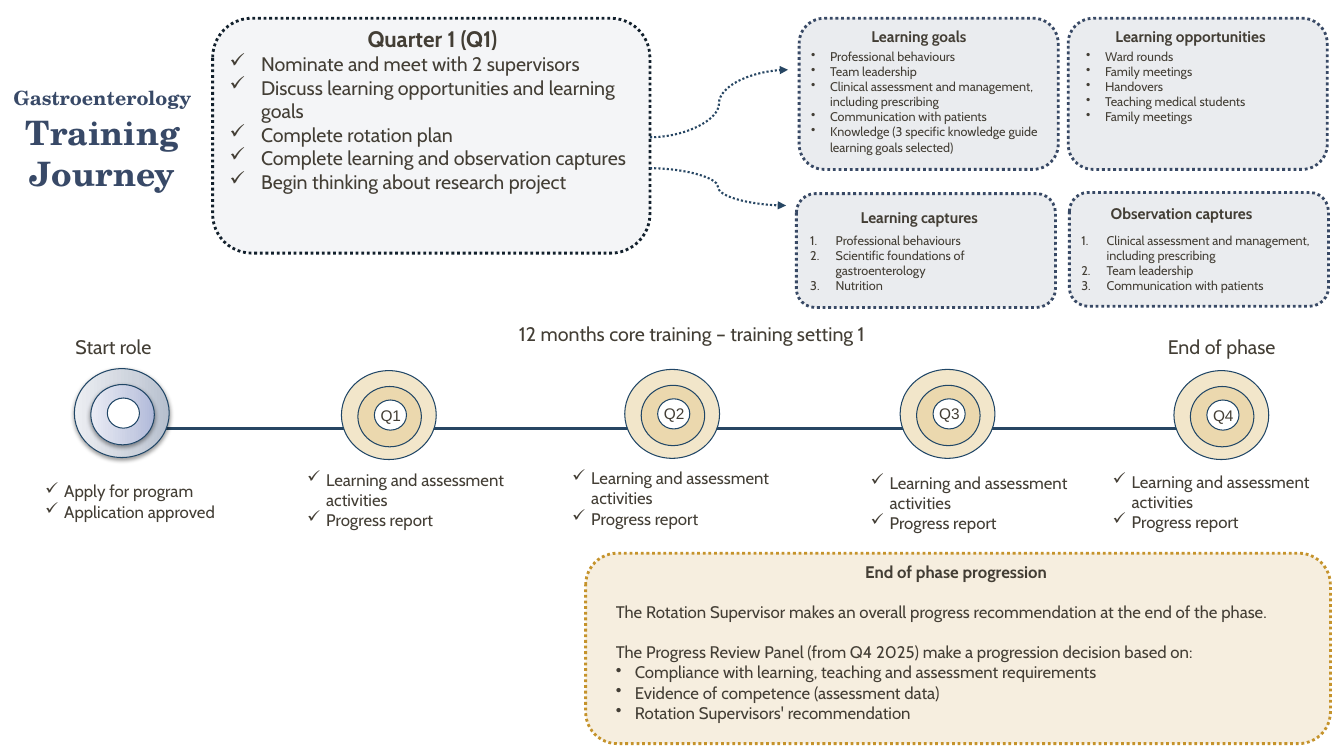
import pptx
import pptx.util
import pptx.dml.color
import pptx.enum.dml
import pptx.enum.shapes
import pptx.enum.text
import pptx.oxml.ns
from lxml import etree

Cm, Pt = pptx.util.Cm, pptx.util.Pt
qn = pptx.oxml.ns.qn
KIND = pptx.enum.shapes.MSO_SHAPE
LINK = pptx.enum.shapes.MSO_CONNECTOR
ALIGN = pptx.enum.text.PP_ALIGN
FIT = pptx.enum.text.MSO_AUTO_SIZE
DOT = pptx.enum.dml.MSO_LINE.ROUND_DOT

HUE = {
    "text": "433E35", "title": "384967", "navy": "384965", "ink": "12202C",
    "rail": "274663", "ring": "204666", "deep": "003C76", "cream": "F2E6CA",
    "gold": "D3A440", "amber": "C5932B", "white": "FFFFFF", "black": "000000",
}
STEEL = ("B6BFCE", "CCD2DC", "ECEEF2")
LILAC = ("AFB8D9", "C7CDE3", "EAECF5")


def rgb(name):
    return pptx.dml.color.RGBColor.from_string(HUE[name])


def sub(node, tag, **attrs):
    return etree.SubElement(node, qn(tag), attrs)


def style(font, hue="text", **values):
    font.color.rgb = rgb(hue)
    for key, value in values.items():
        setattr(font, key, value)


def stroke(line, hue, width, dash=None):
    line.color.rgb = rgb(hue)
    line.width = Pt(width)
    if dash:
        line.dash_style = dash


def shape(slide, kind, box, fill, line, alpha=100):
    item = slide.shapes.add_shape(kind, *map(Cm, box))
    item.shadow.inherit = False
    item.fill.solid()
    item.fill.fore_color.rgb = rgb(fill)
    if alpha < 100:
        tint = item._element.spPr.find(".//" + qn("a:srgbClr"))
        sub(tint, "a:alpha", val=str(alpha * 1000))
    stroke(item.line, *line)
    return item


def shade(item, stops):
    """Give a disc a right-to-left gradient and a soft shadow below."""
    item.fill.gradient()
    item.fill.gradient_angle = 180
    props = item._element.spPr
    ramp = props.find(".//" + qn("a:gsLst"))
    for old in list(ramp):
        ramp.remove(old)
    for spot, hue in zip((0, 35, 100), stops):
        stop = sub(ramp, "a:gs", pos=str(spot * 1000))
        sub(stop, "a:srgbClr", val=hue)
    glow = sub(props.find(qn("a:effectLst")), "a:outerShdw", blurRad=str(Pt(3.1)),
               dist=str(Pt(1.6)), dir="5400000", rotWithShape="0")
    tint = sub(glow, "a:srgbClr", val=HUE["black"])
    sub(tint, "a:alpha", val="38000")


def mark(para, sign, indent):
    """Hang a bullet sign on a paragraph; "1." numbers it."""
    props = para._p.get_or_add_pPr()
    props.set("marL", str(Cm(indent)))
    props.set("indent", str(-Cm(indent)))
    if sign == "1.":
        sub(props, "a:buAutoNum", type="arabicPeriod")
    else:
        sub(props, "a:buChar", char=sign)


def text(slide, box, lines, size, wrap=True, sign=None, indent=0.48, face="Cabin", bold=False):
    frame = slide.shapes.add_textbox(*map(Cm, box)).text_frame
    frame.word_wrap = wrap
    frame.auto_size = FIT.SHAPE_TO_FIT_TEXT
    for i, line in enumerate(lines):
        para = frame.paragraphs[0] if i == 0 else frame.add_paragraph()
        if sign:
            mark(para, sign, indent)
        run = para.add_run()
        run.text = line
        style(run.font, name=face, size=Pt(size), bold=bold)
    return frame


def wire(slide, kind, ends, width, dash=None):
    item = slide.shapes.add_connector(kind, *map(Cm, ends))
    stroke(item.line, "rail", width, dash)
    sub(item._element.spPr, "a:effectLst")
    return item


def head(slide, box):
    title = slide.shapes.title
    title.left, title.top, title.width, title.height = map(Cm, box)
    frame = title.text_frame
    values = {"margin_left": Cm(0.18), "margin_right": Cm(0.18), "margin_top": Cm(0.1),
              "margin_bottom": Cm(0.1), "word_wrap": True, "auto_size": FIT.NONE,
              "vertical_anchor": pptx.enum.text.MSO_ANCHOR.MIDDLE}
    for key, value in values.items():
        setattr(frame, key, value)
    para = frame.paragraphs[0]
    para.alignment = ALIGN.CENTER
    for words, size in (("Gastroenterology", 14), (" Training Journey", 24)):
        run = para.add_run()
        run.text = words
        style(run.font, "title", name="TeX Gyre Schola", size=Pt(size), bold=True)


def stage(slide, x, y, name, note, lines):
    """Draw three nested discs around (x, y) and the checklist below."""
    discs = ((0, 0, 2.39, 2.24, "cream", 100, STEEL),
             (0.02, 0.04, 1.6, 1.52, "gold", 20, LILAC),
             (0.04, 0, 0.81, 0.76, "white", 100, None))
    for dx, dy, w, h, fill, alpha, stops in discs:
        box = (x + dx - w / 2, y + dy - h / 2, w, h)
        disc = shape(slide, KIND.OVAL, box, fill, ("ring", 0.75), alpha)
        if stops and not name:
            shade(disc, stops)
    if name:
        text(slide, (x - 0.46, y - 0.36, 2.11, 0.74), [name], 11, face="Arial")
    text(slide, note, lines, 12, sign="✓")


def track(slide, box):
    x, y, w = box
    wire(slide, LINK.STRAIGHT, (x, y, x + w, y), 2.25)
    tasks = ["Learning and assessment activities", "Progress report"]
    start = ["Apply for program", "Application approved"]
    stages = ((0.78, -0.38, "", (-1.4, 1.21, 5.49), start),
              (7.51, -0.33, "Q1", (5.2, 0.91, 6.12), tasks),
              (14.65, -0.36, "Q2", (11.88, 0.88, 5.89), tasks),
              (21.59, -0.36, "Q3", (19.4, 0.99, 5.89), tasks),
              (28.49, -0.33, "Q4", (25.5, 0.96, 6.53), tasks))
    for dx, dy, name, (nx, ny, nw), lines in stages:
        stage(slide, x + dx, y + dy, name, (x + nx, y + ny, nw, 1.8), lines)
    labels = ((-0.64, -2.47, 2.46, "Start role"),
              (10.54, -2.8, 9.55, "12 months core training – training setting 1"),
              (26.89, -2.47, 3.43, "End of phase"))
    for dx, dy, wide, words in labels:
        text(slide, (x + dx, y + dy, wide, 0.86), [words], 14, wrap=False)


def term(slide, box):
    x, y, w, h = box
    shape(slide, KIND.ROUNDED_RECTANGLE, box, "navy", ("ink", 2, DOT), 5)
    lines = ["Quarter 1 (Q1)", "Nominate and meet with 2 supervisors",
             "Discuss learning opportunities and learning goals", "Complete rotation plan",
             "Complete learning and observation captures", "Begin thinking about research project"]
    frame = text(slide, (x + 0.18, y + 0.05, w - 0.3, h - 0.28), lines[:1], 16, bold=True)
    frame.paragraphs[0].alignment = ALIGN.CENTER
    for line in lines[1:]:
        para = frame.add_paragraph()
        mark(para, "✓", 0.79)
        run = para.add_run()
        run.text = line
        style(run.font, name="Cabin", size=Pt(14))
    for rise, dx, dy in ((3.0, 3.48, -1.7), (3.78, 3.43, 0.94)):
        ends = (x + w, y + rise, x + w + dx, y + rise + dy)
        arrow = wire(slide, LINK.CURVE, ends, 1.5, DOT)
        sub(arrow.line._get_or_add_ln(), "a:tailEnd", type="triangle")


def card(slide, box, name, at, inset, wide, sign, indent, lines):
    x, y, w, h = box
    shape(slide, KIND.ROUNDED_RECTANGLE, box, "navy", ("navy", 2, DOT), 10)
    text(slide, (x + at[0], y + at[1], at[2], 0.74), [name], 11, wrap=False, bold=True)
    text(slide, (x + inset[0], y + inset[1], wide, h - 0.9), lines, 9, sign=sign, indent=indent)


def close(slide, box):
    x, y, w, h = box
    shape(slide, KIND.ROUNDED_RECTANGLE, box, "amber", ("amber", 2, DOT), 15)
    lines = ["End of phase progression",
             "The Rotation Supervisor makes an overall progress recommendation at the end of the phase.",
             "The Progress Review Panel (from Q4 2025) make a progression decision based on:",
             "Compliance with learning, teaching and assessment requirements",
             "Evidence of competence (assessment data)", "Rotation Supervisors' recommendation"]
    frame = text(slide, (x + 0.51, y + 0.08, 17.65, h - 0.43), lines, 12)
    paras = frame.paragraphs
    paras[0].alignment = ALIGN.CENTER
    paras[0].runs[0].font.bold = True
    for para in paras[1:3]:
        para.space_before = Pt(14.4)
    for para in paras[3:]:
        mark(para, "•", 0.48)


def main():
    deck = pptx.Presentation()
    deck.slide_width, deck.slide_height = Cm(33.87), Cm(19.05)
    slide = deck.slides.add_slide(deck.slide_layouts[5])
    head(slide, (-0.03, 2.18, 5.23, 2.31))
    track(slide, (2.29, 10.79, 29.06))
    term(slide, (5.36, 0.46, 11.02, 5.92))
    card(slide, (20.14, 0.46, 6.53, 3.81), "Learning goals", (1.57, 0.1, 3.1),
         (0.05, 0.64), 6.81, "•", 0.48,
         ["Professional behaviours", "Team leadership",
          "Clinical assessment and management, including prescribing", "Communication with patients",
          "Knowledge (3 specific knowledge guide learning goals selected)"])
    card(slide, (26.92, 0.46, 6.53, 3.81), "Learning opportunities", (0.94, 0.1, 4.65),
         (0.2, 0.64), 5.79, "•", 0.48,
         ["Ward rounds", "Family meetings", "Handovers", "Teaching medical students", "Family meetings"])
    card(slide, (20.07, 4.88, 6.53, 2.87), "Learning captures", (1.37, 0.23, 3.78),
         (0.1, 0.86), 5.79, "1.", 0.64,
         ["Professional behaviours", "Scientific foundations of gastroenterology", "Nutrition"])
    card(slide, (26.95, 4.85, 6.53, 2.87), "Observation captures", (0.79, 0.18, 4.42),
         (0.05, 0.89), 6.53, "1.", 0.64,
         ["Clinical assessment and management, including prescribing", "Team leadership",
          "Communication with patients"])
    close(slide, (14.76, 13.94, 18.77, 4.8))
    deck.save("out.pptx")


if __name__ == "__main__":
    main()
